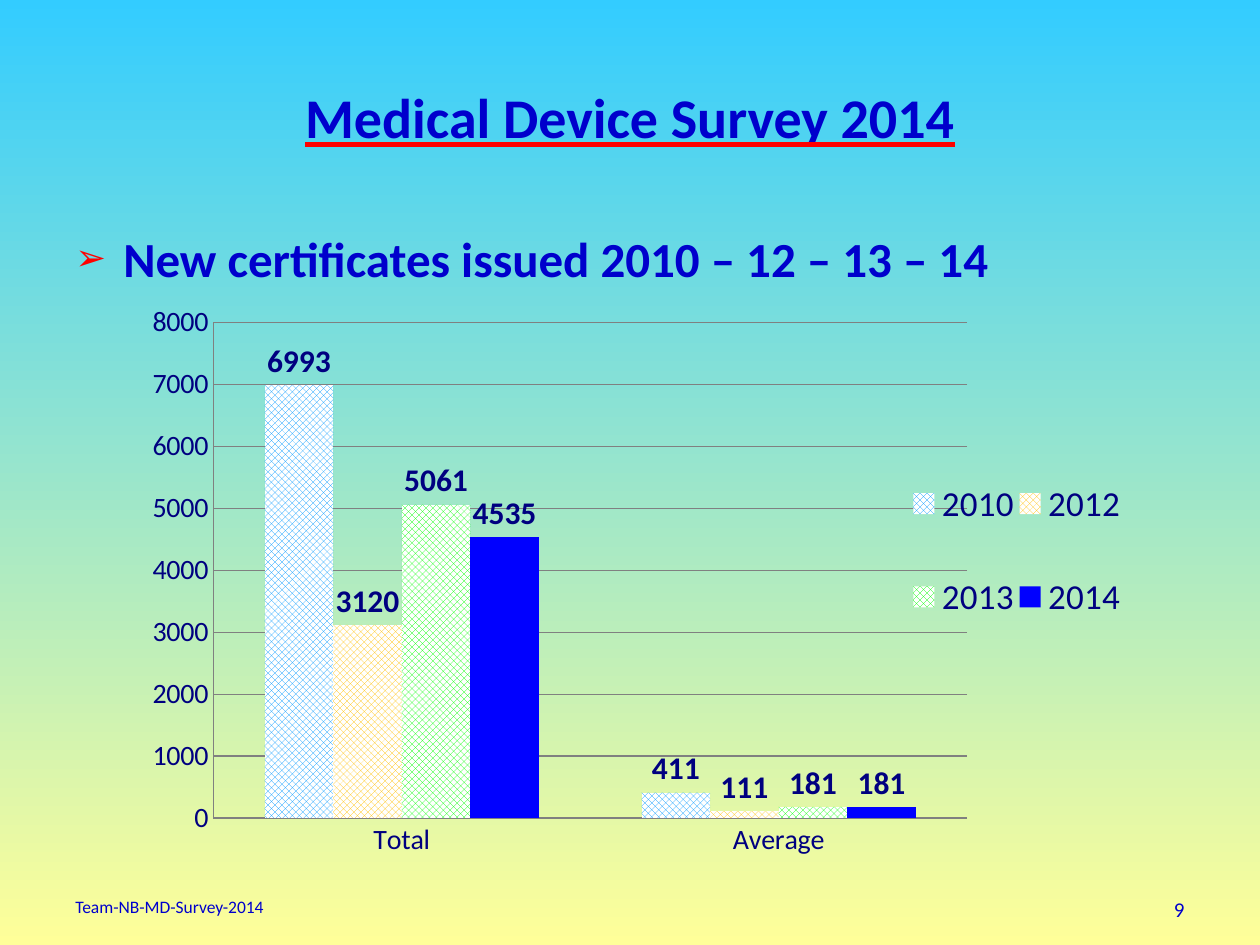
from dataclasses import dataclass

from lxml.etree import SubElement
from pptx import Presentation
from pptx.chart.data import CategoryChartData
from pptx.dml.color import RGBColor
from pptx.enum.chart import XL_CHART_TYPE, XL_LABEL_POSITION, XL_LEGEND_POSITION, XL_TICK_MARK
from pptx.enum.dml import MSO_PATTERN
from pptx.enum.text import MSO_ANCHOR, MSO_AUTO_SIZE, PP_ALIGN
from pptx.oxml import parse_xml
from pptx.oxml.ns import nsdecls, qn
from pptx.util import Emu, Pt


@dataclass(frozen=True)
class Theme:
    """Colours, font and type sizes of the slide."""
    font: str = "Calibri"
    sky: str = "33CCFF"
    sand: str = "FFFF99"
    text: str = "0000CC"
    accent: str = "FF0000"
    chart_text: str = "000080"
    grid: str = "808080"
    white: str = "FFFFFF"
    title: int = 32
    body: int = 28
    legend: int = 20
    label: int = 18
    axis: int = 16
    number: int = 12
    footer: int = 10


T = Theme()
CATEGORIES = ("Total", "Average")
SERIES = (
    ("2010", (6993, 411), "0099FF", True),
    ("2012", (3120, 111), "FFC000", True),
    ("2013", (5061, 181), "00FF00", True),
    ("2014", (4535, 181), "0000FF", False),
)


def px(n):
    """Turn pixels at 126 to the inch into EMU."""
    return Emu(round(n * 914400 / 126))


def rgb(color):
    """Turn a hex string into a colour."""
    return RGBColor.from_string(color)


def place(sp, box):
    """Move a shape to left, top, width, height in px."""
    sp.left, sp.top, sp.width, sp.height = map(px, box)


def style_font(font, size, color, bold=False):
    """Format a font."""
    font.name, font.size, font.bold = T.font, Pt(size), bold
    font.color.rgb = rgb(color)


def write(sp, text, size, bold=False, align=PP_ALIGN.LEFT, anchor=MSO_ANCHOR.TOP):
    """Write one formatted paragraph and return it."""
    tf = sp.text_frame
    tf.word_wrap, tf.auto_size, tf.vertical_anchor = True, MSO_AUTO_SIZE.NONE, anchor
    p = tf.paragraphs[0]
    p.alignment = align
    r = p.add_run()
    r.text = text
    style_font(r.font, size, T.text, bold)
    return p


def add_text(slide, box, text, size, **fmt):
    """Add a text box and return its paragraph."""
    return write(slide.shapes.add_textbox(*map(px, box)), text, size, **fmt)


def add_bullet(p, char, color, indent):
    """Give a paragraph a coloured bullet with a hanging indent."""
    pPr = p._p.get_or_add_pPr()
    pPr.set("marL", str(px(indent)))
    pPr.set("indent", str(-px(indent)))
    SubElement(SubElement(pPr, qn("a:buClr")), qn("a:srgbClr"), val=color)
    SubElement(pPr, qn("a:buSzPct"), val="75000")
    SubElement(pPr, qn("a:buFont"), typeface="Arial")
    SubElement(pPr, qn("a:buChar"), char=char)


def underline(r, color):
    """Underline a run in its own colour."""
    r.font.underline = True
    fill = parse_xml(
        f'<a:uFill {nsdecls("a")}><a:solidFill><a:srgbClr val="{color}"/></a:solidFill></a:uFill>'
    )
    r._r.rPr.find(qn("a:latin")).addprevious(fill)


def set_background(slide):
    """Fill the background from sky at the top to sand at the bottom."""
    fill = slide.background.fill
    fill.gradient()
    fill.gradient_angle = 270
    for stop, color in zip(fill.gradient_stops, (T.sky, T.sand)):
        stop.color.rgb = rgb(color)


def manual_layout(x, y, w, h, inner=False):
    """Return a chart layout given as fractions of the chart."""
    target = '<c:layoutTarget val="inner"/>' if inner else ""
    modes = '<c:xMode val="edge"/><c:yMode val="edge"/>'
    sizes = "".join(f'<c:{k} val="{v}"/>' for k, v in zip("xywh", (x, y, w, h)))
    return parse_xml(
        f'<c:layout {nsdecls("c")}><c:manualLayout>{target}{modes}{sizes}</c:manualLayout></c:layout>'
    )


def style_axis(axis):
    """Format an axis."""
    axis.major_tick_mark = axis.minor_tick_mark = XL_TICK_MARK.NONE
    style_font(axis.tick_labels.font, T.axis, T.chart_text)
    axis.format.line.color.rgb = rgb(T.grid)
    axis.format.line.width = Pt(0.75)


def style_series(series, color, patterned):
    """Fill the columns of a series and show their values."""
    fill = series.format.fill
    if patterned:
        fill.patterned()
        fill.pattern = MSO_PATTERN.LARGE_CHECKER_BOARD
        fill.fore_color.rgb, fill.back_color.rgb = rgb(color), rgb(T.white)
    else:
        fill.solid()
        fill.fore_color.rgb = rgb(color)
    series.invert_if_negative = False
    labels = series.data_labels
    labels.show_value = True
    labels.position = XL_LABEL_POSITION.OUTSIDE_END
    style_font(labels.font, T.label, T.chart_text, True)


def add_legend(chart):
    """Add the legend in two columns over the right edge."""
    chart.has_legend = True
    legend = chart.legend
    legend.position = XL_LEGEND_POSITION.RIGHT
    legend.include_in_layout = False
    style_font(legend.font, T.legend, T.chart_text)
    element = legend._element
    for old in element.findall(qn("c:layout")):
        element.remove(old)
    element.find(qn("c:legendPos")).addnext(manual_layout(0.78, 0.24, 0.22, 0.41))


def add_certificates_chart(slide, box):
    """Add the clustered columns of certificates by year."""
    data = CategoryChartData()
    data.categories = CATEGORIES
    for name, values, _, _ in SERIES:
        data.add_series(name, values)
    chart = slide.shapes.add_chart(XL_CHART_TYPE.COLUMN_CLUSTERED, *map(px, box), data).chart
    chart.has_title = False
    style_font(chart.font, T.axis, T.chart_text)
    for axis in (chart.category_axis, chart.value_axis):
        style_axis(axis)
    axis = chart.value_axis
    axis.minimum_scale, axis.maximum_scale, axis.major_unit = 0, 8000, 1000
    axis.major_gridlines.format.line.color.rgb = rgb(T.grid)
    axis.major_gridlines.format.line.width = Pt(0.75)
    plot = chart.plots[0]
    plot.gap_width, plot.overlap, plot.vary_by_categories = 150, 0, False
    for series, (_, _, color, patterned) in zip(plot.series, SERIES):
        style_series(series, color, patterned)
    add_legend(chart)
    area = chart._chartSpace.chart.plotArea
    for old in area.findall(qn("c:layout")):
        area.remove(old)
    area.insert(0, manual_layout(0.08, 0.05, 0.76, 0.86, inner=True))


def main():
    """Build the slide and save it."""
    prs = Presentation()
    prs.slide_width, prs.slide_height = px(1260), px(945)
    slide = prs.slides.add_slide(prs.slide_layouts[5])
    set_background(slide)
    title = slide.shapes.title
    place(title, (63, 38, 1134, 157))
    p = write(title, "Medical Device Survey 2014", T.title, bold=True,
              align=PP_ALIGN.CENTER, anchor=MSO_ANCHOR.MIDDLE)
    underline(p.runs[0], T.accent)
    add_text(slide, (63, 890, 399, 37), "Team-NB-MD-Survey-2014", T.footer)
    add_text(slide, (903, 890, 294, 37), "9", T.number, align=PP_ALIGN.RIGHT)
    p = add_text(slide, (63, 222, 1134, 103), "New certificates issued 2010 – 12 – 13 – 14",
                 T.body, bold=True)
    add_bullet(p, "➢", T.accent, 48)
    add_certificates_chart(slide, (134, 294, 992, 576))
    prs.save("out.pptx")


if __name__ == "__main__":
    main()
